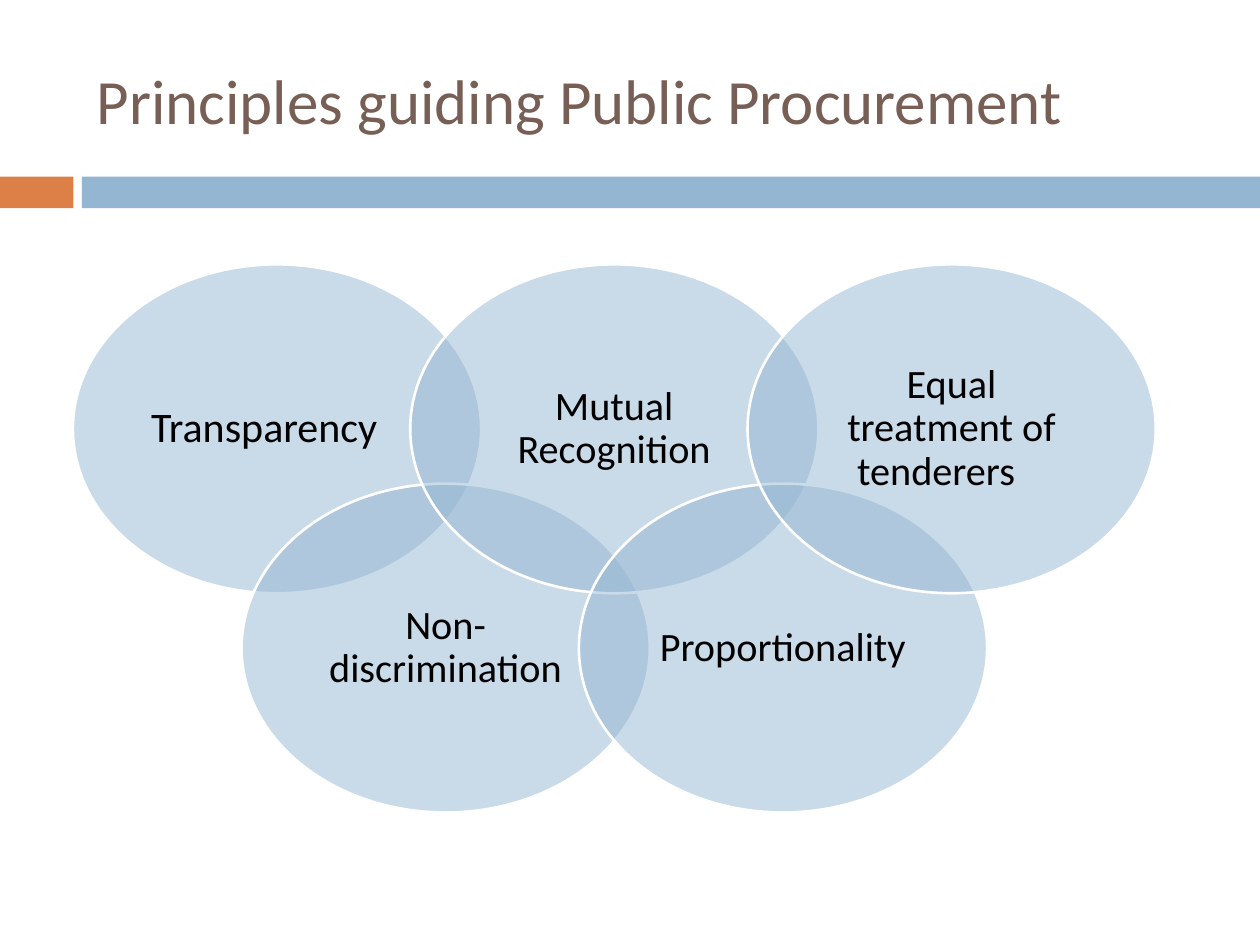
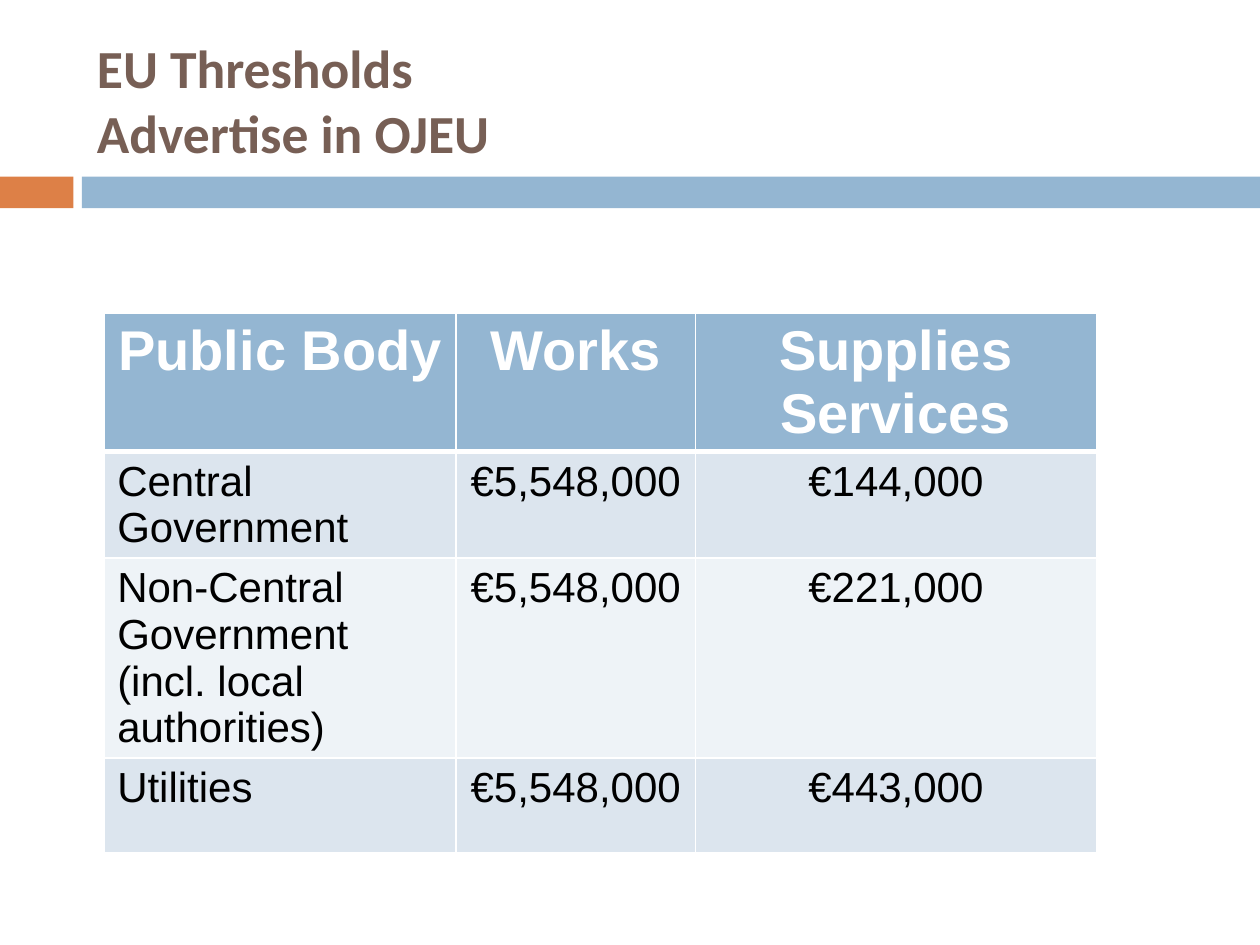
"""Build two slides on the principles and thresholds of public procurement."""
from lxml.etree import SubElement as Sub
from pptx import Presentation
from pptx.dml.color import RGBColor as RGB
from pptx.enum.shapes import MSO_SHAPE as Kind
from pptx.enum.text import MSO_ANCHOR as Anchor, MSO_AUTO_SIZE as Fit, PP_ALIGN as Align
from pptx.oxml.ns import qn
from pptx.util import Cm, Pt

HUES = {"title": "775F55", "accent": "DD8047", "blue": "94B6D2", "odd": "DCE5EE",
        "even": "EEF3F7", "white": "FFFFFF", "black": "000000"}


def hue(name):
    return RGB.from_string(HUES[name])


def write(para, text, size, color, font="Calibri", bold=False):
    run = para.add_run()
    run.text = text
    run.font.name, run.font.size, run.font.bold = font, Pt(size), bold
    run.font.color.rgb = hue(color)


def draw(slide, kind, box, color):
    shape = slide.shapes.add_shape(kind, *map(Cm, box))
    shape.shadow.inherit = False
    shape.fill.solid()
    shape.fill.fore_color.rgb = hue(color)
    shape.line.fill.background()
    return shape


def add_bands(slide):
    tree = slide.slide_layout.shapes.element
    for left, width, color in ((0, 1.48, "accent"), (1.65, 23.75, "blue")):
        band = draw(slide, Kind.RECTANGLE, (left, 3.56, width, 0.64), color)
        tree.append(band.element)


def add_title(slide, lines, size, bold=False):
    title = slide.shapes.title
    title.left, title.top, title.width, title.height = map(Cm, (1.7, 0.64, 22.66, 2.74))
    frame = title.text_frame
    frame.auto_size, frame.vertical_anchor = Fit.NONE, Anchor.MIDDLE
    para = frame.paragraphs[0]
    para.alignment = Align.LEFT
    for i, line in enumerate(lines):
        if i:
            para.add_line_break()
        write(para, line, size, "title", bold=bold)


def add_ring(slide, left, top, text, size):
    wide, high, padx, pady = 8.23, 6.63, 1.2, 0.97
    ring = draw(slide, Kind.OVAL, (left, top, wide, high), "blue")
    color = ring.element.spPr.find(qn("a:solidFill"))[0]
    Sub(color, qn("a:alpha"), val="50000")
    ring.line.color.rgb, ring.line.width = hue("white"), Pt(1.5)
    box = (left + padx, top + pady, wide - 2 * padx, high - 2 * pady)
    frame = slide.shapes.add_textbox(*map(Cm, box)).text_frame
    frame.word_wrap, frame.vertical_anchor = True, Anchor.MIDDLE
    frame.margin_left = frame.margin_right = Cm(0.25)
    frame.margin_top = frame.margin_bottom = Cm(0.25)
    para = frame.paragraphs[0]
    para.alignment, para.line_spacing = Align.CENTER, 0.9
    write(para, text, size, "black")


def add_edges(cell, base):
    props = cell._tc.get_or_add_tcPr()
    for side, width in (("L", 1), ("R", 1), ("T", 1), ("B", base)):
        edge = Sub(props, qn("a:ln" + side), w=str(Pt(width)))
        Sub(Sub(edge, qn("a:solidFill")), qn("a:srgbClr"), val=HUES["white"])


def add_grid(slide, rows, widths, heights):
    box = map(Cm, (2.11, 6.32, sum(widths), sum(heights)))
    table = slide.shapes.add_table(len(rows), len(widths), *box).table
    for col, width in zip(table.columns, widths):
        col.width = Cm(width)
    for r, (row, height) in enumerate(zip(rows, heights)):
        table.rows[r].height = Cm(height)
        head = r == 0
        for c, text in enumerate(row):
            cell = table.cell(r, c)
            add_edges(cell, 3 if head else 1)
            cell.fill.solid()
            cell.fill.fore_color.rgb = hue("blue" if head else "odd" if r % 2 else "even")
            para = cell.text_frame.paragraphs[0]
            para.alignment = Align.CENTER if head or c else Align.LEFT
            write(para, text, 32 if head else 24, "white" if head else "black", "Arial", head)


def main():
    deck = Presentation()
    deck.slide_width, deck.slide_height = Cm(25.4), Cm(19.05)
    first, second = (deck.slides.add_slide(deck.slide_layouts[5]) for _ in range(2))
    add_bands(first)

    add_title(first, ["Principles guiding Public Procurement"], 36)
    names = ("Transparency \t", "Non-discrimination", "Mutual Recognition",
             "Proportionality", "Equal treatment of tenderers\t")
    for i, name in enumerate(names):
        add_ring(first, 1.47 + 3.4 * i, 9.75 if i % 2 else 5.33, name, 23 if i else 24)

    add_title(second, ["EU Thresholds ", "Advertise in OJEU"], 30.6, True)
    rows = (("Public Body", "Works", "Supplies Services"),
            ("Central Government", "€5,548,000", "€144,000"),
            ("Non-Central Government (incl. local authorities)", "€5,548,000", "€221,000"),
            ("Utilities", "€5,548,000", "€443,000"))
    add_grid(second, rows, (7.08, 4.83, 8.08), (2.74, 2.13, 4.03, 1.9))
    deck.save("out.pptx")


if __name__ == "__main__":
    main()
